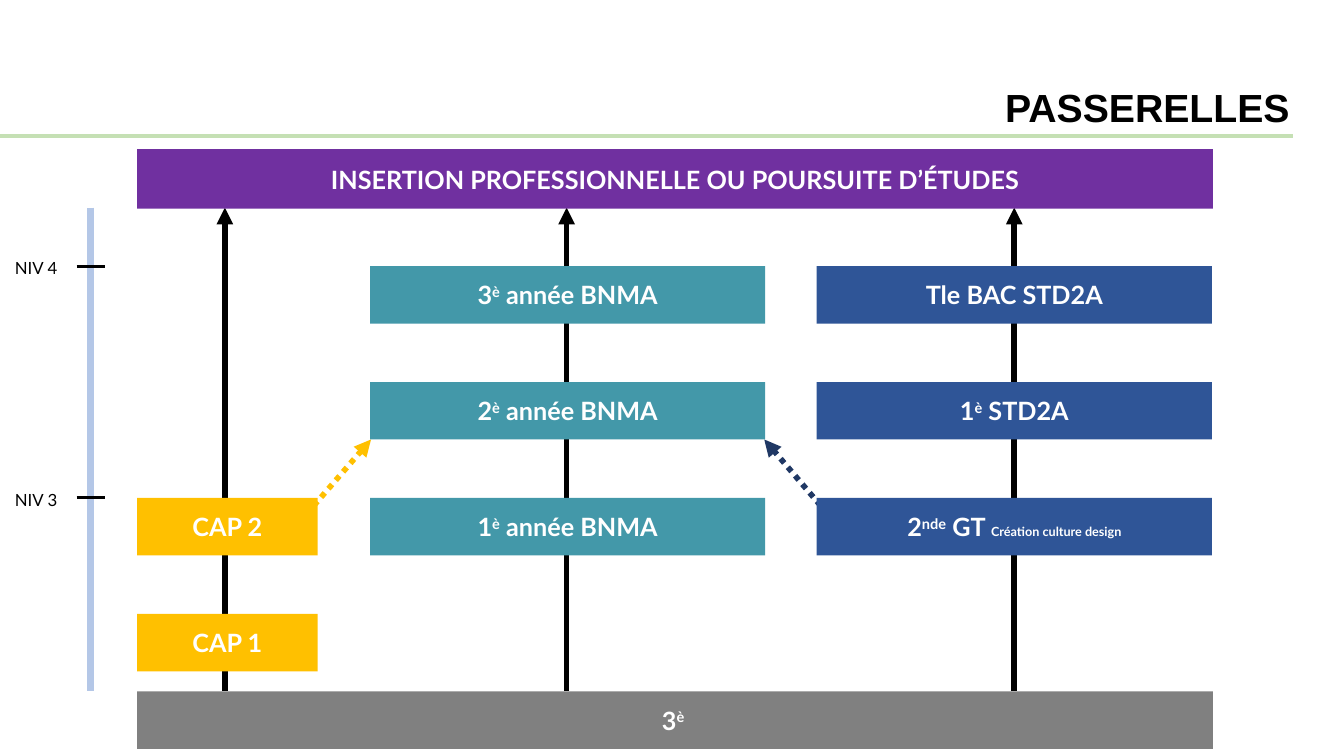
from dataclasses import dataclass
from typing import NamedTuple

from lxml.etree import SubElement
from pptx import Presentation
from pptx.dml.color import RGBColor
from pptx.enum.dml import MSO_LINE
from pptx.enum.shapes import MSO_CONNECTOR, MSO_SHAPE
from pptx.enum.text import MSO_ANCHOR, PP_ALIGN
from pptx.oxml.ns import qn
from pptx.util import Emu, Pt

EMU_PER_PX = 9144  # 100 px to the inch


@dataclass(frozen=True)
class Theme:
    black: str = "000000"
    white: str = "FFFFFF"
    purple: str = "7030A0"
    blue: str = "2F5597"
    navy: str = "203864"
    teal: str = "4398A9"
    amber: str = "FFC000"
    grey: str = "808080"
    axis: str = "B4C7E7"
    rule: str = "C5E0B4"
    title_font: str = "Arial"
    body_font: str = "Lato"
    title_size: float = 28
    box_size: float = 18
    level_size: float = 12
    detail_size: float = 9


THEME = Theme()


class Piece(NamedTuple):
    text: str
    size: float = THEME.box_size
    raised: bool = False


def px(length):
    return Emu(length * EMU_PER_PX)


def ordinal(number, suffix, rest=""):
    """Return a number, its raised suffix and the words after it."""
    pieces = [Piece(number), Piece(suffix, raised=True)]
    return pieces + [Piece(rest)] if rest else pieces


def add_run(paragraph, piece, font, color, bold=False):
    run = paragraph.add_run()
    run.text = piece.text
    run.font.name = font
    run.font.size = Pt(piece.size)
    run.font.bold = bold
    run.font.color.rgb = RGBColor.from_string(color)
    if piece.raised:
        run.font._element.set("baseline", "30000")


def add_line(slide, start, end, color, width, dash=None, arrow=False):
    line = slide.shapes.add_connector(
        MSO_CONNECTOR.STRAIGHT, *(px(value) for value in (*start, *end)))
    line.line.color.rgb = RGBColor.from_string(color)
    line.line.width = Pt(width)
    if dash:
        line.line.dash_style = dash
    if arrow:
        SubElement(line.line._get_or_add_ln(), qn("a:tailEnd"), type="triangle")
    SubElement(line._element.spPr, qn("a:effectLst"))


def add_box(slide, left, top, width, height, color, pieces):
    box = slide.shapes.add_shape(
        MSO_SHAPE.RECTANGLE, px(left), px(top), px(width), px(height))
    box.shadow.inherit = False
    box.fill.solid()
    box.fill.fore_color.rgb = RGBColor.from_string(color)
    box.line.fill.background()
    frame = box.text_frame
    frame.word_wrap = True
    frame.vertical_anchor = MSO_ANCHOR.MIDDLE
    paragraph = frame.paragraphs[0]
    paragraph.alignment = PP_ALIGN.CENTER
    for piece in pieces:
        add_run(paragraph, piece, THEME.body_font, THEME.white, bold=True)


def add_level(slide, text, top):
    """Add a tick on the level axis and its label."""
    add_line(slide, (76, top), (104, top), THEME.black, 2.25)
    label = slide.shapes.add_textbox(px(5), px(top - 13), px(67), px(30))
    label.text_frame.word_wrap = True
    add_run(label.text_frame.paragraphs[0], Piece(text, THEME.level_size),
            THEME.body_font, THEME.black)


def set_title(slide, text):
    title = slide.shapes.title
    title.left, title.top, title.width, title.height = map(px, (898, 53, 391, 82))
    title.text_frame.vertical_anchor = MSO_ANCHOR.BOTTOM
    paragraph = title.text_frame.paragraphs[0]
    paragraph.alignment = PP_ALIGN.RIGHT
    paragraph.line_spacing = 0.9
    add_run(paragraph, Piece(text, THEME.title_size), THEME.title_font,
            THEME.black, bold=True)


def main():
    presentation = Presentation()
    presentation.slide_width, presentation.slide_height = px(1333), px(750)
    slide = presentation.slides.add_slide(presentation.slide_layouts[5])
    set_title(slide, "PASSERELLES")
    add_line(slide, (0, 135), (1282, 135), THEME.rule, 2.5)

    banner_bottom, base_top = 206, 686
    add_line(slide, (90, banner_bottom), (90, base_top), THEME.axis, 5)
    for center in (223, 562, 1006):
        add_line(slide, (center, base_top), (center, banner_bottom),
                 THEME.black, 4, arrow=True)
    for start, end, color in (
        ((304, 510), (368, 436), THEME.amber),
        ((821, 510), (758, 436), THEME.navy),
    ):
        add_line(slide, start, end, color, 4, MSO_LINE.ROUND_DOT, arrow=True)

    row_top, row_step, box_height = 264, 115, 57
    add_box(slide, 136, 148, 1067, 59, THEME.purple,
            [Piece("INSERTION PROFESSIONNELLE OU POURSUITE D’ÉTUDES")])
    add_box(slide, 136, base_top, 1067, box_height, THEME.grey,
            ordinal("3", "è "))
    tracks = (
        (136, 179, THEME.amber, {2: [Piece("CAP 2")], 3: [Piece("CAP 1")]}),
        (367, 392, THEME.teal,
         {row: ordinal(str(3 - row), "è", " année BNMA") for row in range(3)}),
        (810, 392, THEME.blue, {
            0: [Piece("Tle BAC STD2A")],
            1: ordinal("1", "è", " STD2A"),
            2: ordinal("2", "nde", " GT ")
            + [Piece("Création culture design", THEME.detail_size)],
        }),
    )
    for left, width, color, years in tracks:
        for row, pieces in years.items():
            add_box(slide, left, row_top + row * row_step, width, box_height,
                    color, pieces)

    add_level(slide, "NIV 4", row_top)
    add_level(slide, "NIV 3", row_top + 2 * row_step)
    presentation.save("out.pptx")


if __name__ == "__main__":
    main()
